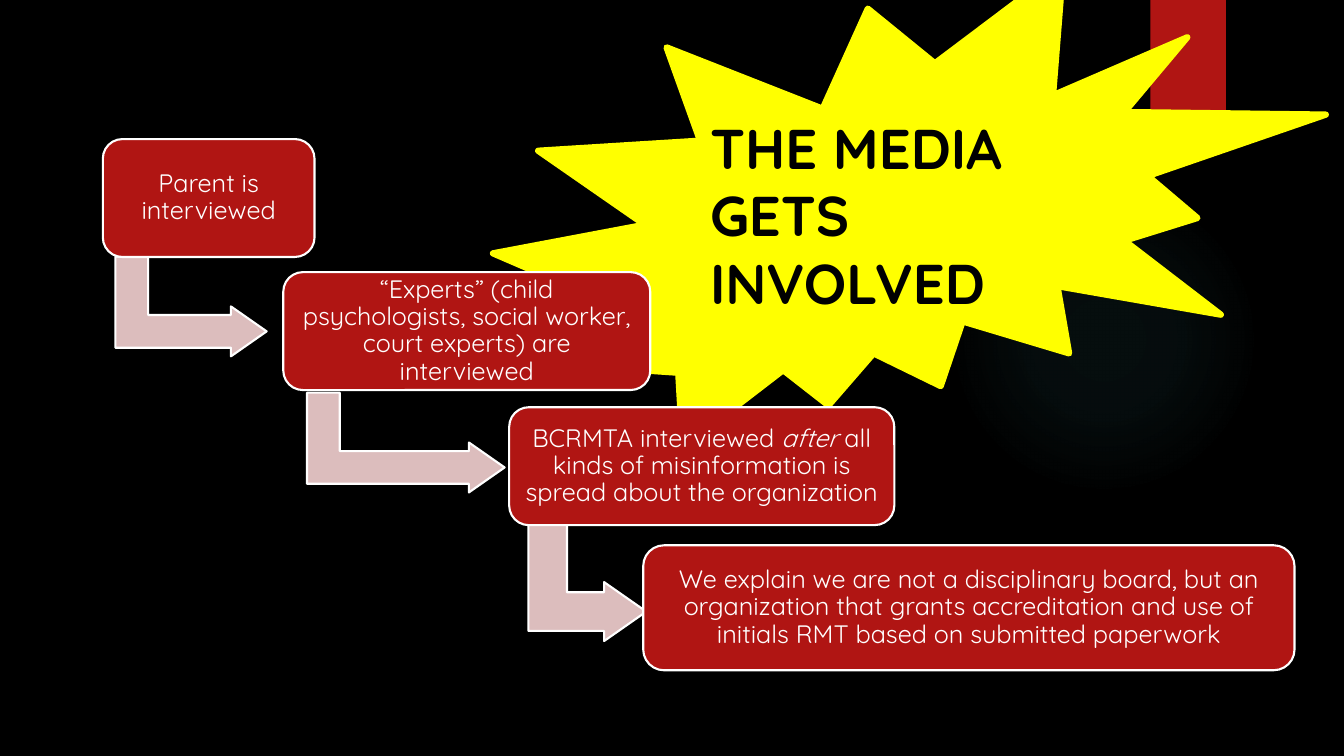
from lxml import etree
from pptx import Presentation
from pptx import util as u
from pptx.dml.color import RGBColor
from pptx.enum import shapes, text
from pptx.oxml import ns, parse_xml

PX = 9144  # one px is a hundredth of an inch
SLIDE_SIZE = (1333, 750)

# Content: bounds are left, top, width, height as seen on the slide
TITLE = "THE MEDIA GETS INVOLVED"
BURST = (489, -33, 826, 477)
GLOW = (941, 183, 308, 308)
RIBBON = (1141, 0, 75, 125)
STEPS = [  # bounds, runs of (text, italic)
    ((102, 138, 210, 117), [("Parent is interviewed", False)]),
    ((281, 270, 364, 117), [
        ("“Experts” (child psychologists, social worker, court experts) "
         "are interviewed", False)]),
    ((505, 404, 382, 117), [
        ("BCRMTA interviewed ", False), ("after", True),
        (" all kinds of misinformation is spread about the organization", False)]),
    ((638, 541, 646, 124), [
        ("We explain we are not a disciplinary board, but an organization that "
         "grants accreditation and use of initials RMT based on submitted "
         "paperwork", False)]),
]
ARROWS = [(115, 255, 150, 99), (305, 390, 196, 99), (524, 515, 117, 121)]
ARROW_ADJUSTMENTS = (0.328, 0.25, 0.358)
GLOW_STOPS = [(0, 7), (36, 6), (69, 0)]  # position and opacity in percent


class Theme:
    font = "Quicksand"
    title_size, step_size = 40, 18
    background, title = "000000", "000000"
    red, pink, white = "B01513", "DCBDBD", "FFFFFF"
    yellow, glow = "FFFF00", "50B9C1"
    outline, burst_outline = 1.5, 4.5


def add_part(kind, bounds, fill, line=None, line_width=Theme.outline):
    shape = slide.shapes.add_shape(kind, *(value * PX for value in bounds))
    shape.shadow.inherit = False
    shape.fill.solid()
    shape.fill.fore_color.rgb = RGBColor.from_string(fill)
    if line:
        shape.line.color.rgb = RGBColor.from_string(line)
        shape.line.width = u.Pt(line_width)
        etree.SubElement(shape.line._get_or_add_ln(), ns.qn("a:round"))
    else:
        shape.line.fill.background()
    return shape


def write(shape, runs, size, color, alignment, anchor):
    frame = shape.text_frame
    frame.word_wrap = True
    frame.vertical_anchor = anchor
    paragraph = frame.paragraphs[0]
    paragraph.alignment = alignment
    for words, italic in runs:
        run = paragraph.add_run()
        run.text = words
        run.font.name = Theme.font
        run.font.size = u.Pt(size)
        run.font.italic = italic
        run.font.color.rgb = RGBColor.from_string(color)
    return paragraph


def fade(shape):
    stops = "".join(
        f'<a:gs pos="{position * 1000}"><a:srgbClr val="{Theme.glow}">'
        f'<a:alpha val="{opacity * 1000}"/></a:srgbClr></a:gs>'
        for position, opacity in GLOW_STOPS)
    gradient = parse_xml(
        f'<a:gradFill {ns.nsdecls("a")}><a:gsLst>{stops}</a:gsLst>'
        '<a:path path="circle"><a:fillToRect l="50000" t="50000" r="50000" '
        'b="50000"/></a:path></a:gradFill>')
    properties = shape._element.spPr
    properties.replace(properties.find(ns.qn("a:solidFill")), gradient)


presentation = Presentation()
presentation.slide_width, presentation.slide_height = (
    value * PX for value in SLIDE_SIZE)
slide = presentation.slides.add_slide(presentation.slide_layouts[6])

# Backdrop
slide.background.fill.solid()
slide.background.fill.fore_color.rgb = RGBColor.from_string(Theme.background)
fade(add_part(shapes.MSO_SHAPE.OVAL, GLOW, Theme.glow))
add_part(shapes.MSO_SHAPE.RECTANGLE, RIBBON, Theme.red)

# Title burst
burst = add_part(shapes.MSO_SHAPE.EXPLOSION2, BURST, Theme.yellow,
                 Theme.yellow, Theme.burst_outline)
title = write(burst, [(TITLE, False)], Theme.title_size, Theme.title,
              text.PP_ALIGN.LEFT, text.MSO_ANCHOR.TOP)
title.runs[0].font.bold = True

# Arrows: a quarter turn swaps width and height around the centre
for left, top, width, height in ARROWS:
    shift = (width - height) / 2
    bounds = (int(left + shift), int(top - shift), height, width)
    arrow = add_part(shapes.MSO_SHAPE.BENT_UP_ARROW, bounds, Theme.pink, Theme.white)
    arrow.rotation = 90
    for index, value in enumerate(ARROW_ADJUSTMENTS):
        arrow.adjustments[index] = value

# Steps
for bounds, runs in STEPS:
    box = add_part(shapes.MSO_SHAPE.ROUNDED_RECTANGLE, bounds, Theme.red, Theme.white)
    frame = box.text_frame
    frame.margin_left = frame.margin_right = 7 * PX
    frame.margin_top = frame.margin_bottom = 7 * PX
    paragraph = write(box, runs, Theme.step_size, Theme.white,
                      text.PP_ALIGN.CENTER, text.MSO_ANCHOR.MIDDLE)
    paragraph.line_spacing = 0.9

presentation.save("out.pptx")
